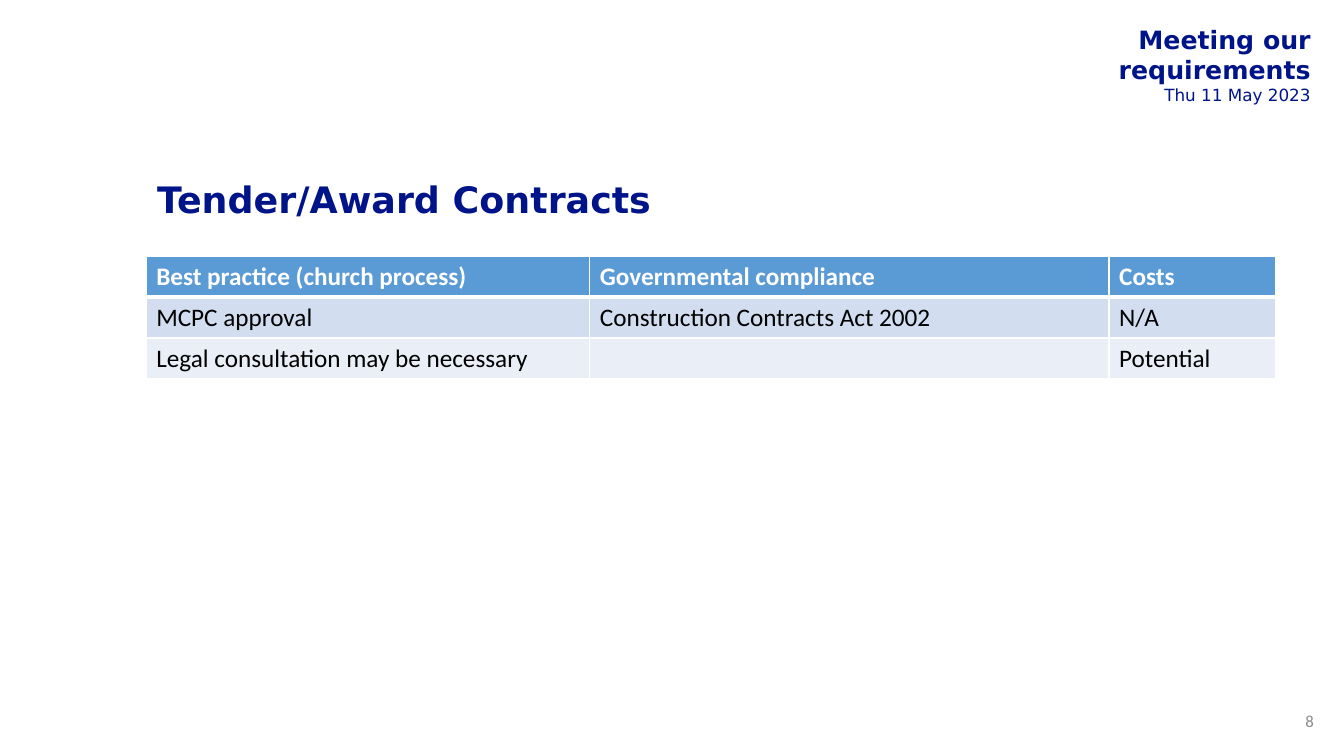
from typing import NamedTuple

from lxml import etree
from pptx import Presentation
from pptx.dml.color import RGBColor
from pptx.enum.text import MSO_ANCHOR, PP_ALIGN
from pptx.oxml.ns import qn
from pptx.util import Pt

PX = 9144  # 100 px to the inch
LEFT, RIGHT = PP_ALIGN.LEFT, PP_ALIGN.RIGHT
TOP, MIDDLE = MSO_ANCHOR.TOP, MSO_ANCHOR.MIDDLE

NAVY, WHITE, BLACK, GREY = "001489", "FFFFFF", "000000", "8C8C8C"
SANS, BODY = "DejaVu Sans", "Calibri"


class Box(NamedTuple):
    left: int
    top: int
    width: int
    height: int


class Band(NamedTuple):
    texts: tuple[str, str, str]
    fill: str
    color: str = BLACK
    bold: bool = False
    over: int = 1
    under: int = 1


HEADER = Box(922, 20, 385, 88)
TITLE = Box(146, 150, 1120, 101)
NUMBER = Box(1271, 695, 42, 40)
GRID = Box(145, 254, 1120, 122)
COLUMNS = (440, 515, 165)
BANDS = (
    Band(("Best practice (church process)", "Governmental compliance", "Costs"),
         "5B9BD5", WHITE, bold=True, under=3),
    Band(("MCPC approval", "Construction Contracts Act 2002", "N/A"),
         "D2DEEF", over=3),
    Band(("Legal consultation may be necessary", "", "Potential"), "EAEFF7"),
)


def rgb(color: str) -> RGBColor:
    return RGBColor.from_string(color)


def scale(box: Box) -> list[int]:
    return [side * PX for side in box]


def write(para, text: str, *, size: int, font: str = SANS, color: str = NAVY,
          bold: bool = False, align=LEFT, spacing: float = 1.0) -> None:
    para.alignment = align
    para.line_spacing = spacing
    run = para.add_run()
    run.text = text
    run.font.size = Pt(size)
    run.font.name = font
    run.font.bold = bold
    run.font.color.rgb = rgb(color)


def add_frame(slide, box: Box, anchor=MIDDLE):
    frame = slide.shapes.add_textbox(*scale(box)).text_frame
    frame.word_wrap = True
    frame.vertical_anchor = anchor
    return frame


def add_header(slide) -> None:
    frame = add_frame(slide, HEADER, TOP)
    frame.margin_left = 150 * PX
    frame.margin_right = 7 * PX
    frame.margin_top = frame.margin_bottom = 4 * PX
    write(frame.paragraphs[0], "Meeting our requirements", size=18, bold=True, align=RIGHT)
    write(frame.add_paragraph(), "Thu 11 May 2023", size=12, align=RIGHT)


def add_border(cell, side: str, width: int) -> None:
    props = cell._tc.get_or_add_tcPr()
    line = etree.SubElement(props, qn(f"a:ln{side}"), w=str(Pt(width)))
    fill = etree.SubElement(line, qn("a:solidFill"))
    etree.SubElement(fill, qn("a:srgbClr"), val=WHITE)


def add_grid(slide) -> None:
    table = slide.shapes.add_table(len(BANDS), len(COLUMNS), *scale(GRID)).table
    table.first_row = table.horz_banding = False
    for column, width in zip(table.columns, COLUMNS):
        column.width = width * PX
    for row, band in zip(table.rows, BANDS):
        for cell, text in zip(row.cells, band.texts):
            # Borders must come before the fill in the cell properties.
            for side, width in (("L", 1), ("R", 1), ("T", band.over), ("B", band.under)):
                add_border(cell, side, width)
            cell.fill.solid()
            cell.fill.fore_color.rgb = rgb(band.fill)
            if text:
                write(cell.text_frame.paragraphs[0], text, size=18, font=BODY,
                      color=band.color, bold=band.bold)


def main() -> None:
    deck = Presentation()
    deck.slide_width, deck.slide_height = 1333 * PX, 750 * PX
    slide = deck.slides.add_slide(deck.slide_layouts[6])
    add_header(slide)
    write(add_frame(slide, TITLE).paragraphs[0], "Tender/Award Contracts",
          size=26, bold=True, spacing=0.9)
    write(add_frame(slide, NUMBER).paragraphs[0], "8",
          size=12, font=BODY, color=GREY, align=RIGHT)
    add_grid(slide)
    deck.save("out.pptx")


if __name__ == "__main__":
    main()
